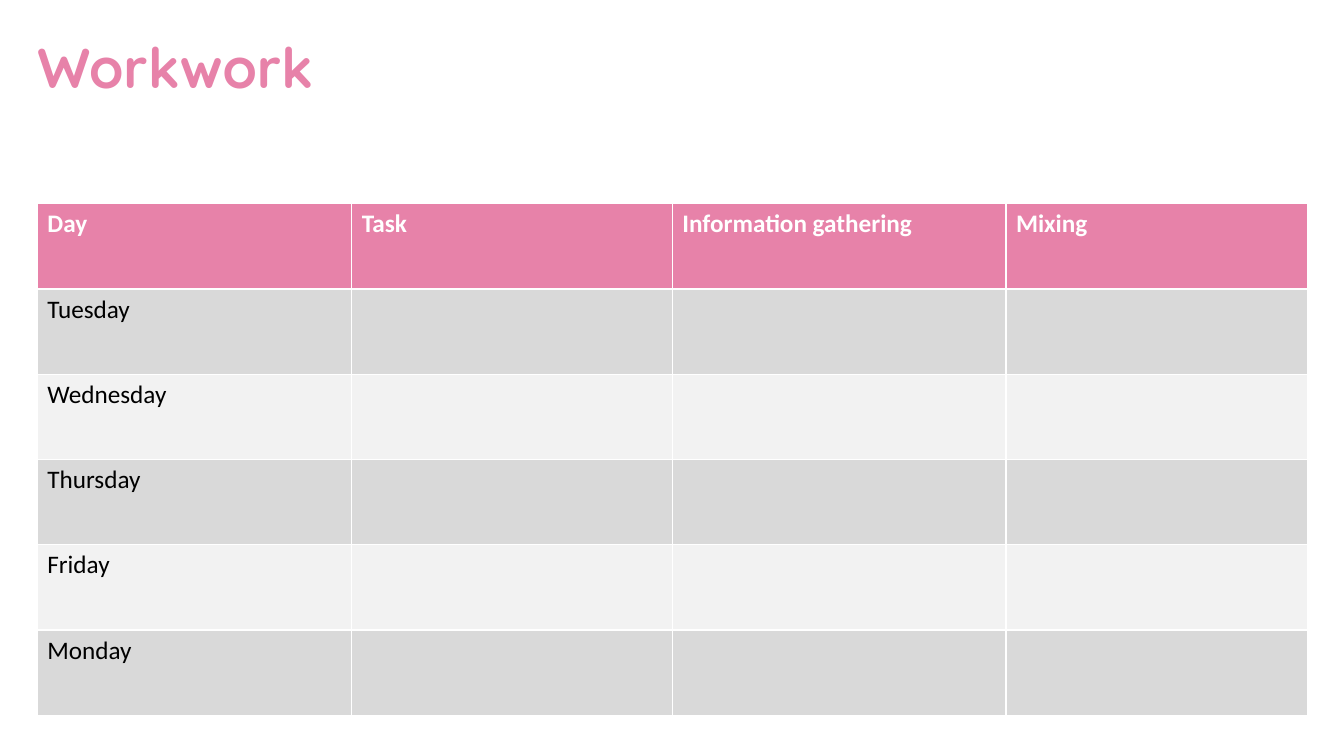
from pptx import Presentation
from pptx.dml.color import RGBColor
from pptx.util import Pt


def style_font(font, name, size, color, bold):
    font.name, font.size, font.bold = name, Pt(size), bold
    font.color.rgb = RGBColor.from_string(color)


PINK = "E782A9"
BANDS = ["F2F2F2", "D9D9D9"]
LEFT, WIDTH = 26.64, 907.2
ROW_HEIGHT = 60.9
COLUMN_WIDTHS = [224.64, 228.96, 238.32, 215.28]
HEADINGS = ["Day", "Task", "Information gathering", "Mixing"]
DAYS = ["Tuesday", "Wednesday", "Thursday", "Friday", "Monday"]

deck = Presentation()
deck.slide_width, deck.slide_height = Pt(960), Pt(540)
page = deck.slides.add_slide(deck.slide_layouts[6])

# Weekly plan: the default table style supplies the white rules
rows = [HEADINGS] + [[day, "", "", ""] for day in DAYS]
table = page.shapes.add_table(
    len(rows), len(HEADINGS), Pt(LEFT), Pt(145.6), Pt(WIDTH), Pt(ROW_HEIGHT * len(rows))
).table
for column, width in zip(table.columns, COLUMN_WIDTHS):
    column.width = Pt(width)

for r, texts in enumerate(rows):
    table.rows[r].height = Pt(ROW_HEIGHT)
    is_header = r == 0
    for c, text in enumerate(texts):
        cell = table.cell(r, c)
        cell.fill.solid()
        cell.fill.fore_color.rgb = RGBColor.from_string(PINK if is_header else BANDS[r % 2])
        cell.text = text
        style_font(cell.text_frame.paragraphs[0].font, "Calibri", 18,
                   "FFFFFF" if is_header else "000000", is_header)

# Title
title = page.shapes.add_textbox(Pt(LEFT), Pt(28.8), Pt(WIDTH), Pt(116)).text_frame
title.word_wrap = True
title.margin_left = title.margin_top = title.margin_right = title.margin_bottom = 0
para = title.paragraphs[0]
para.text = "Workwork"
para.line_spacing = 0.9
style_font(para.font, "Quicksand", 40, PINK, True)

deck.save("out.pptx")
